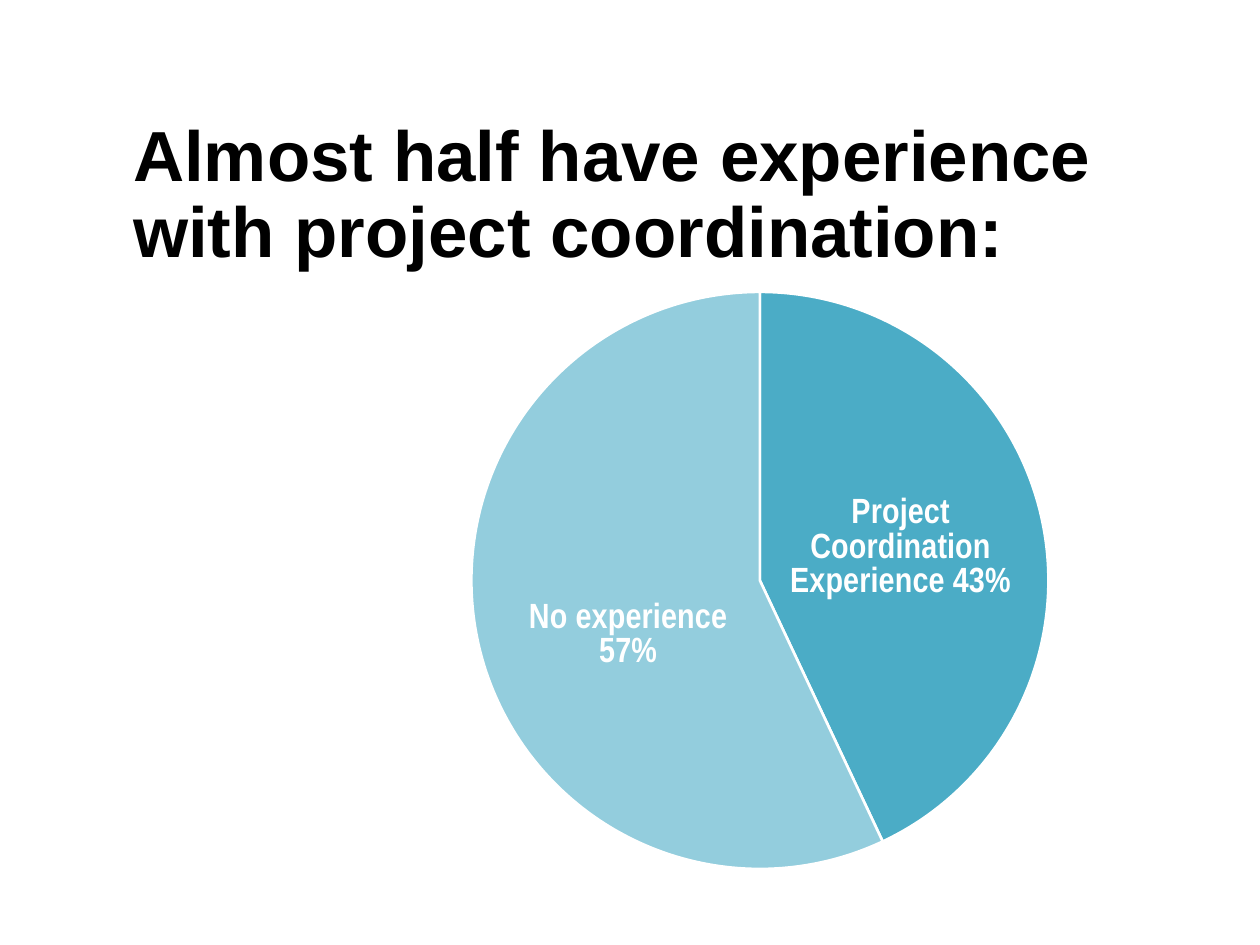
from dataclasses import dataclass

from lxml import etree
from pptx import Presentation
from pptx.chart.data import CategoryChartData
from pptx.dml.color import RGBColor
from pptx.enum.chart import XL_CHART_TYPE, XL_LABEL_POSITION
from pptx.enum.text import MSO_ANCHOR
from pptx.oxml.ns import qn
from pptx.util import Pt

PIE = XL_CHART_TYPE.PIE
CENTER = XL_LABEL_POSITION.CENTER
BOTTOM = MSO_ANCHOR.BOTTOM
PERCENT = "0%"


@dataclass(frozen=True)
class Theme:
    ink: str = "000000"
    white: str = "FFFFFF"
    teal: str = "4BACC6"
    pale: str = "93CDDD"
    title: float = 40.5
    label: float = 20
    base: float = 10


@dataclass(frozen=True)
class Slice:
    name: str
    share: float
    color: str
    shift: tuple = (0, 0)  # label offset, as fractions of the chart


THEME = Theme()
TITLE = "Almost half have experience with project coordination:"
TITLE_BOX = (69, 49, 599, 107)
CHART_BOX = (128, 156, 523.5, 351.5)
SLICES = [
    Slice("Project Coordination Experience", 0.43, THEME.teal),
    Slice("No experience", 0.57, THEME.pale, shift=(0.01, 0.04)),
]


def style(font, *, name, size, color, bold=False):
    font.name, font.size, font.bold = name, Pt(size), bold
    font.color.rgb = RGBColor.from_string(color)


def add_text(slide, text, box, *, spacing=1.0, **look):
    """Add a bottom-anchored text box; look holds the font settings."""
    frame = slide.shapes.add_textbox(*map(Pt, box)).text_frame
    frame.word_wrap = True
    frame.vertical_anchor = BOTTOM
    frame.margin_left = frame.margin_right = Pt(7.2)
    frame.margin_top = frame.margin_bottom = 0
    para = frame.paragraphs[0]
    para.line_spacing = spacing
    run = para.add_run()
    run.text = text
    style(run.font, **look)


def layout(**parts):
    """Build a manual chart layout from fractions of the chart frame."""
    root = etree.Element(qn("c:layout"))
    manual = etree.SubElement(root, qn("c:manualLayout"))
    for key, value in parts.items():
        etree.SubElement(manual, qn(f"c:{key}"), val=str(value))
    return root


def place_plot(chart, **parts):
    area = chart.plots[0]._element.getparent()
    for old in area.findall(qn("c:layout")):
        area.remove(old)
    area.insert(0, layout(layoutTarget="inner", xMode="edge", yMode="edge",
                          **parts))


def paint(point, color):
    form = point.format
    form.fill.solid()
    form.fill.fore_color.rgb = RGBColor.from_string(color)
    form.line.color.rgb = RGBColor.from_string(THEME.white)
    form.line.width = Pt(1.5)


def add_label(series, index, shift):
    """Show category and percent inside one slice."""
    label = series.points[index].data_label
    style(label.font, name="Arial Narrow", size=THEME.label,
          color=THEME.white, bold=True)
    label.position = CENTER

    node = series._element.findall(f".//{qn('c:dLbl')}")[index]
    node.find(qn("c:showCatName")).set("val", "1")
    etree.SubElement(node, qn("c:separator")).text = " "
    number = etree.Element(qn("c:numFmt"), formatCode=PERCENT,
                           sourceLinked="0")
    x, y = shift
    node.find(qn("c:idx")).addnext(number)
    number.addprevious(layout(x=x, y=y))


def add_pie(slide, slices, box):
    data = CategoryChartData(number_format=PERCENT)
    data.categories = [part.name for part in slices]
    data.add_series("Series 1", [part.share for part in slices])
    chart = slide.shapes.add_chart(PIE, *map(Pt, box), data).chart
    chart.has_legend = chart.has_title = False
    style(chart.font, name="Calibri", size=THEME.base, color=THEME.ink)
    place_plot(chart, x=0.27, y=0.03, w=0.63, h=0.94)

    plot = chart.plots[0]
    plot.vary_by_categories = True
    series = plot.series[0]
    for index, part in enumerate(slices):
        paint(series.points[index], part.color)
        add_label(series, index, part.shift)


def main():
    deck = Presentation()
    deck.slide_width, deck.slide_height = Pt(720), Pt(540)
    slide = deck.slides.add_slide(deck.slide_layouts[6])
    add_text(slide, TITLE, TITLE_BOX, spacing=0.9, name="Arial",
             size=THEME.title, color=THEME.ink, bold=True)
    add_pie(slide, SLICES, CHART_BOX)
    deck.save("out.pptx")


if __name__ == "__main__":
    main()
